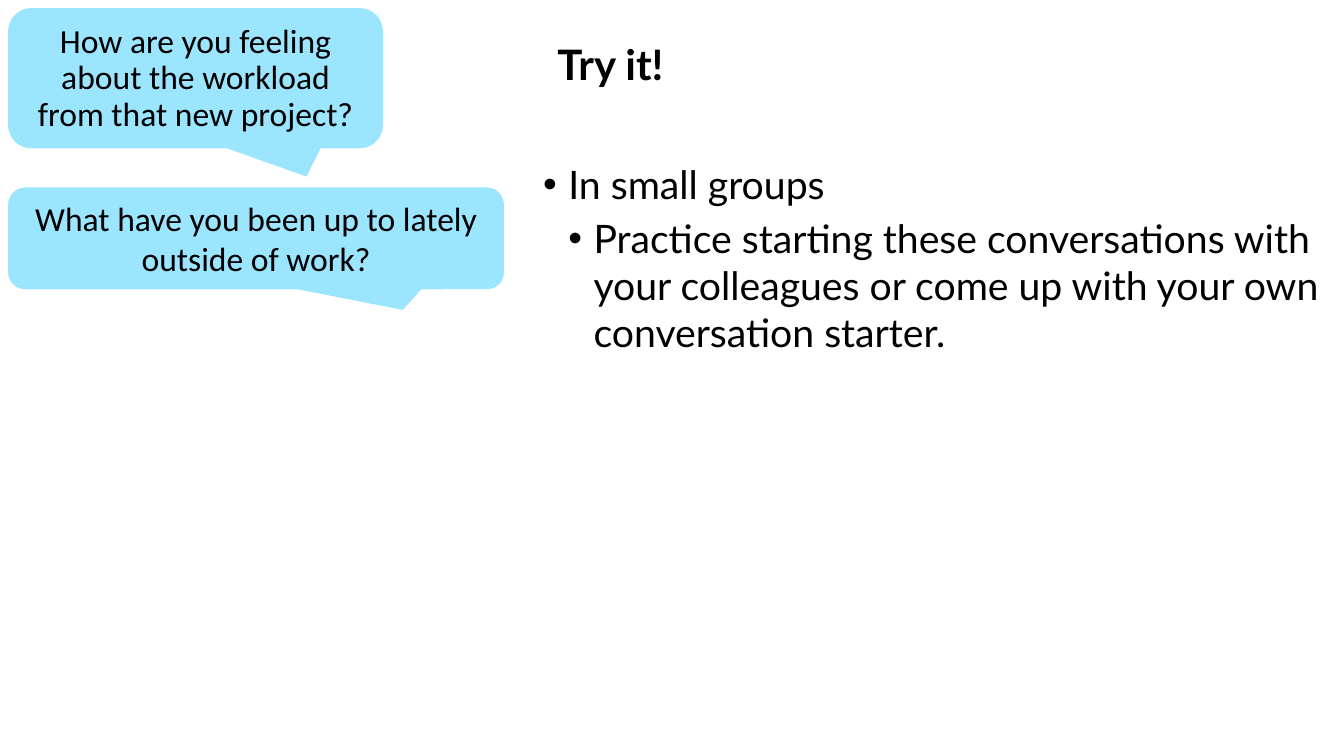
from lxml.etree import SubElement
from pptx import Presentation
from pptx.dml.color import RGBColor
from pptx.enum.shapes import MSO_SHAPE
from pptx.enum.text import MSO_ANCHOR, MSO_AUTO_SIZE, PP_ALIGN
from pptx.oxml.ns import qn
from pptx.util import Pt

COLORS = {"bubble": "9BE5FF", "text": "000000"}
TITLE = "Try it!"
TITLE_BOX = (391, 5.8, 563.8, 84.2)
BODY_BOX = (380.9, 110.9, 573.1, 229)
INDENT = 18
# level, space before, text
BODY = [
    (0, 0, "In small groups"),
    (1, 5, "Practice starting these conversations with your colleagues "
           "or come up with your own conversation starter."),
]
# text, (left, top, width, height), line spacing
BUBBLES = [
    ("How are you feeling about the workload from that new project?",
     (5.8, 5.8, 267.8, 100.1), Pt(26)),
    ("What have you been up to lately outside of work?",
     (5.8, 133.9, 354.2, 72.7), 1.0),
]
TAIL = (0.296, 0.702, 0.167)


def points(box):
    return [Pt(value) for value in box]


def write(para, text, line_spacing=1.0, **font_format):
    para.line_spacing = line_spacing
    span = para.add_run()
    span.text = text
    for name, value in font_format.items():
        setattr(span.font, name, value)
    span.font.color.rgb = RGBColor.from_string(COLORS["text"])


def add_bullet(para, level):
    """Give the paragraph a round bullet with a hanging indent."""
    para.level = level
    properties = para._p.get_or_add_pPr()
    properties.set("marL", str(Pt(INDENT * (level + 1))))
    properties.set("indent", str(Pt(-INDENT)))
    SubElement(properties, qn("a:buFont"), typeface="Arial")
    SubElement(properties, qn("a:buChar"), char="•")


def add_title(page):
    title = page.shapes.title
    title.left, title.top, title.width, title.height = points(TITLE_BOX)
    frame = title.text_frame
    frame.auto_size = MSO_AUTO_SIZE.NONE
    frame.vertical_anchor = MSO_ANCHOR.MIDDLE
    para = frame.paragraphs[0]
    para.alignment = PP_ALIGN.LEFT
    write(para, TITLE, 0.9, name="Lato", size=Pt(30), bold=True)


def add_bubble(page, text, box, line_spacing):
    bubble = page.shapes.add_shape(MSO_SHAPE.ROUNDED_RECTANGULAR_CALLOUT, *points(box))
    for index, value in enumerate(TAIL):
        bubble.adjustments[index] = value
    bubble.shadow.inherit = False
    bubble.fill.solid()
    bubble.fill.fore_color.rgb = RGBColor.from_string(COLORS["bubble"])
    bubble.line.fill.background()
    frame = bubble.text_frame
    frame.word_wrap = True
    frame.vertical_anchor = MSO_ANCHOR.MIDDLE
    para = frame.paragraphs[0]
    para.alignment = PP_ALIGN.CENTER
    write(para, text, line_spacing, name="Calibri", size=Pt(24))


def add_body(page):
    frame = page.shapes.add_textbox(*points(BODY_BOX)).text_frame
    frame.word_wrap = True
    for index, (level, space, text) in enumerate(BODY):
        para = frame.add_paragraph() if index else frame.paragraphs[0]
        add_bullet(para, level)
        para.space_before = Pt(space)
        write(para, text, name="Lato", size=Pt(28))


def main():
    deck = Presentation()
    deck.slide_width, deck.slide_height = Pt(960), Pt(540)
    page = deck.slides.add_slide(deck.slide_layouts[5])
    add_title(page)
    for text, box, line_spacing in BUBBLES:
        add_bubble(page, text, box, line_spacing)
    add_body(page)
    deck.save("out.pptx")


if __name__ == "__main__":
    main()
